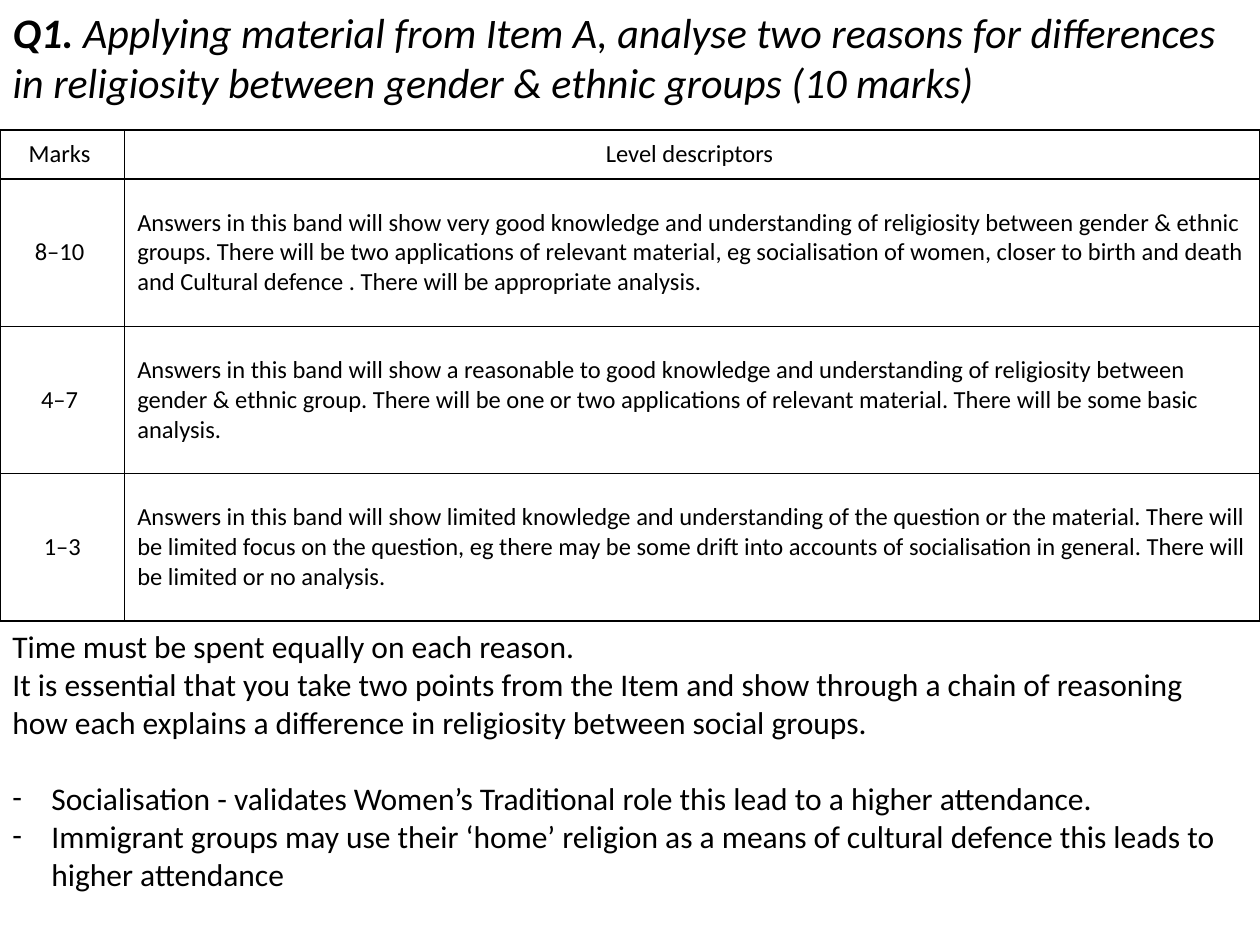
from lxml import etree
from pptx import Presentation
from pptx.dml.color import RGBColor
from pptx.enum import text
from pptx.oxml.ns import qn
from pptx.util import Inches, Pt

BLACK = RGBColor(0x00, 0x00, 0x00)
FONT = "Calibri"
INDENT = Inches(0.31)

LEVELS = [
    ("Marks ", "Level descriptors "),
    ("8–10 ", "Answers in this band will show very good knowledge and understanding of "
     "religiosity between gender & ethnic groups. There will be two applications of "
     "relevant material, eg socialisation of women, closer to birth and death and "
     "Cultural defence . There will be appropriate analysis."),
    ("4–7 ", "Answers in this band will show a reasonable to good knowledge and "
     "understanding of religiosity between gender & ethnic group. There will be one or "
     "two applications of relevant material. There will be some basic analysis."),
    ("1–3", "Answers in this band will show limited knowledge and understanding of the "
     "question or the material. There will be limited focus on the question, eg there "
     "may be some drift into accounts of socialisation in general. There will be "
     "limited or no analysis."),
]
ADVICE = [
    "Time must be spent equally on each reason.",
    "It is essential that you take two points from the Item and show through a chain of "
    "reasoning how each explains a difference in religiosity between social groups.",
]
REASONS = [
    "Socialisation - validates Women’s Traditional role this lead to a higher attendance.",
    "Immigrant groups may use their ‘home’ religion as a means of cultural defence this "
    "leads to higher attendance",
]


def add_text(p, content, size=18, bold=False, italic=False, align=text.PP_ALIGN.LEFT):
    p.alignment = align
    r = p.add_run()
    r.text = content
    r.font.name = FONT
    r.font.size = Pt(size)
    r.font.bold = bold
    r.font.italic = italic
    r.font.color.rgb = BLACK


def add_bullet(p, char):
    pPr = p._p.get_or_add_pPr()
    pPr.set("marL", str(INDENT))
    pPr.set("indent", str(-INDENT))
    etree.SubElement(pPr, qn("a:buFont"), typeface=FONT)
    etree.SubElement(pPr, qn("a:buChar"), char=char)


def add_borders(cell):
    tcPr = cell._tc.get_or_add_tcPr()
    for side in ("lnL", "lnR", "lnT", "lnB"):
        ln = etree.SubElement(tcPr, qn(f"a:{side}"), w=str(Pt(1)))
        fill = etree.SubElement(ln, qn("a:solidFill"))
        etree.SubElement(fill, qn("a:srgbClr"), val=str(BLACK))


def add_question(slide):
    sp = slide.shapes.title
    sp.left, sp.top, sp.width, sp.height = Inches(0), Inches(0), Inches(10), Inches(0.91)
    tf = sp.text_frame
    tf.word_wrap = True
    tf.auto_size = text.MSO_AUTO_SIZE.NONE
    tf.vertical_anchor = text.MSO_ANCHOR.TOP
    p = tf.paragraphs[0]
    add_text(p, "Q1.", size=24, bold=True, italic=True)
    add_text(p, " Applying material from Item A, analyse two reasons for differences in "
             "religiosity between gender & ethnic groups (10 marks)", size=24, italic=True)


def add_levels(slide):
    table = slide.shapes.add_table(
        len(LEVELS), 2, Inches(0), Inches(1.03), Inches(10), Inches(3.9)).table
    table.first_row = table.horz_banding = False
    table.columns[0].width = Inches(0.99)
    table.columns[1].width = Inches(9.01)
    for i, row in enumerate(LEVELS):
        table.rows[i].height = Inches(1.17 if i else 0.39)
        for j, content in enumerate(row):
            cell = table.cell(i, j)
            cell.vertical_anchor = text.MSO_ANCHOR.MIDDLE
            add_borders(cell)
            cell.fill.background()
            centred = i == 0 or j == 0
            add_text(cell.text_frame.paragraphs[0], content, size=14,
                     align=text.PP_ALIGN.CENTER if centred else text.PP_ALIGN.LEFT)


def add_advice(slide):
    sp = slide.shapes.add_textbox(Inches(0), Inches(4.93), Inches(9.75), Inches(2.22))
    tf = sp.text_frame
    tf.word_wrap = True
    for i, content in enumerate(ADVICE + REASONS):
        p = tf.add_paragraph() if i else tf.paragraphs[0]
        add_text(p, content)
        if i == len(ADVICE):
            p.space_before = Pt(22)
        if i >= len(ADVICE):
            add_bullet(p, "-")


def main():
    prs = Presentation()
    prs.slide_width, prs.slide_height = Inches(10), Inches(7.5)
    slide = prs.slides.add_slide(prs.slide_layouts[5])
    add_question(slide)
    add_levels(slide)
    add_advice(slide)
    prs.save("out.pptx")


if __name__ == "__main__":
    main()
